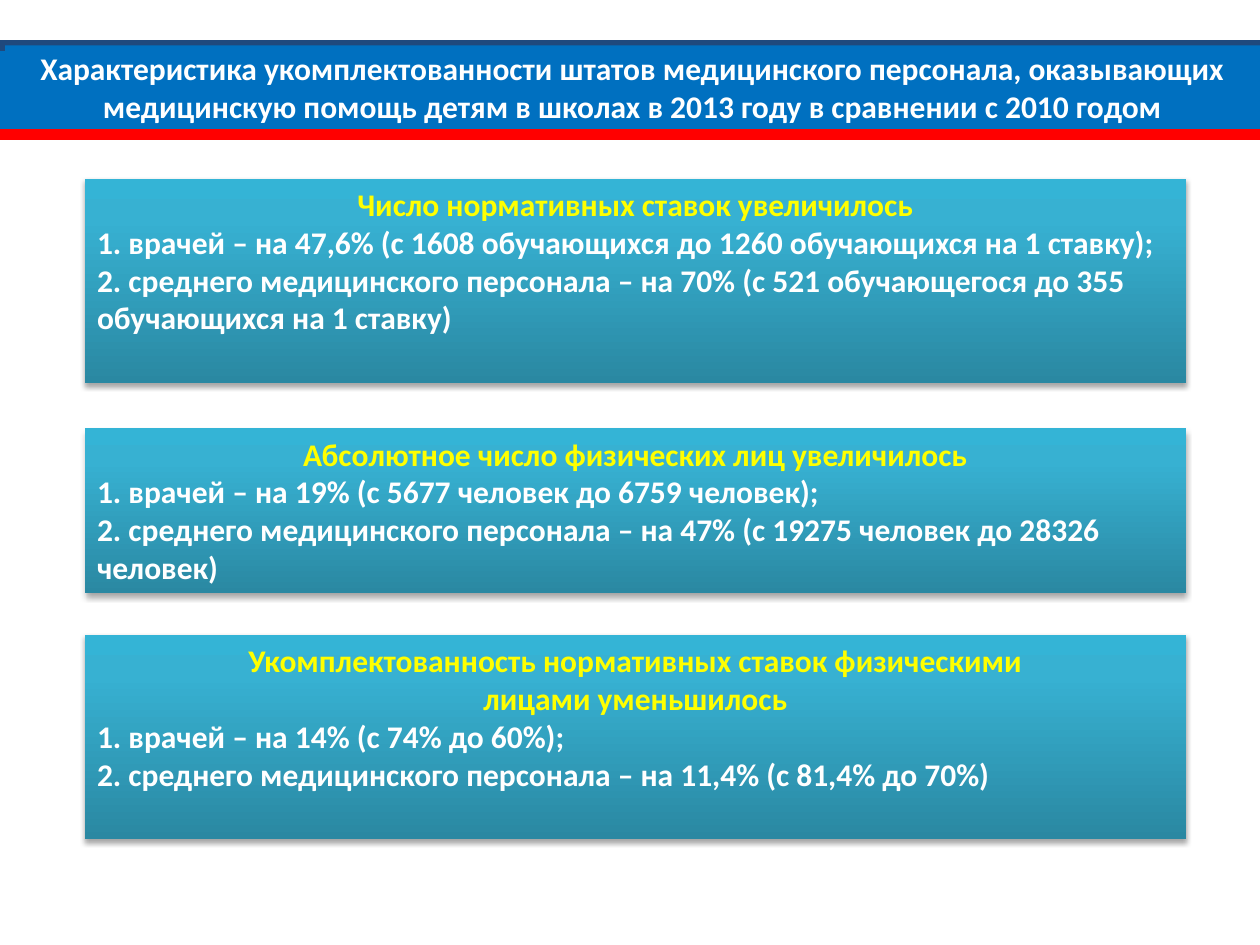
from dataclasses import dataclass

from lxml.etree import SubElement
from pptx import Presentation
from pptx.dml.color import RGBColor as Rgb
from pptx.enum.shapes import MSO_CONNECTOR as Connector, MSO_SHAPE as Shape
from pptx.enum.text import MSO_ANCHOR as Anchor, PP_ALIGN as Align
from pptx.oxml.ns import qn
from pptx.util import Pt

COLORS = {
    "banner": "0070C0", "navy": "1F497D", "red": "FF0000",
    "white": "FFFFFF", "yellow": "FFFF00", "shadow": "000000",
    "panel_bottom": "2A88A2", "panel_middle": "37B1D2", "panel_top": "34B4D6",
}
PANEL_STOPS = ((0, "panel_bottom"), (80, "panel_middle"), (100, "panel_top"))
PAGE_WIDTH, PAGE_HEIGHT = 720, 540
PANEL_LEFT, PANEL_WIDTH = 48.4, 629.4
BANNER_TOP, BANNER_HEIGHT = 26, 51
TITLE = ("Характеристика укомплектованности штатов медицинского персонала, "
         "оказывающих медицинскую помощь детям в школах в 2013 году "
         "в сравнении с 2010 годом")


@dataclass
class Panel:
    top: float
    height: float
    heading: list[str]
    items: list[str]


PANELS = [
    Panel(102.2, 116.6, ["Число нормативных ставок увеличилось"], [
        "1. врачей – на 47,6% (с 1608 обучающихся до 1260 обучающихся на 1 ставку);",
        "2. среднего медицинского персонала – на 70% (с 521 обучающегося "
        "до 355 обучающихся на 1 ставку)"]),
    Panel(244.8, 94.4, ["Абсолютное число физических лиц увеличилось"], [
        "1. врачей – на 19% (с 5677 человек до 6759 человек);",
        "2. среднего медицинского персонала – на 47% (с 19275 человек "
        "до 28326 человек)"]),
    Panel(362.9, 116.6,
          ["Укомплектованность нормативных ставок физическими", "лицами уменьшилось"], [
              "1. врачей – на 14% (с 74% до 60%);",
              "2. среднего медицинского персонала – на 11,4% (с 81,4% до 70%)"]),
]


def add_box(page, left: float, top: float, width: float, height: float):
    """Add a plain banner-coloured rectangle without outline."""
    box = page.shapes.add_shape(Shape.RECTANGLE, Pt(left), Pt(top), Pt(width), Pt(height))
    box.shadow.inherit = False
    box.fill.solid()
    box.fill.fore_color.rgb = Rgb.from_string(COLORS["banner"])
    box.line.fill.background()
    box.text_frame.word_wrap = True
    return box


def add_rule(page, top: float, color: str) -> None:
    """Add a thick line across the whole page."""
    rule = page.shapes.add_connector(Connector.STRAIGHT, Pt(0), Pt(top), Pt(PAGE_WIDTH), Pt(top))
    rule.line.color.rgb = Rgb.from_string(COLORS[color])
    rule.line.width = Pt(6)
    SubElement(rule.element.spPr, qn("a:effectLst"))


def write_lines(box, lines: list[tuple[str, str, Align]]) -> None:
    """Write one bold paragraph per (text, colour, alignment)."""
    frame = box.text_frame
    for index, (text, color, align) in enumerate(lines):
        para = frame.add_paragraph() if index else frame.paragraphs[0]
        para.alignment = align
        span = para.add_run()
        span.text = text
        span.font.name = "Calibri"
        span.font.size = Pt(18)
        span.font.bold = True
        span.font.color.rgb = Rgb.from_string(COLORS[color])


def style_panel(box) -> None:
    """Give a panel its three-stop gradient and soft lower shadow."""
    box.fill.gradient()
    box.fill.gradient_angle = 90
    stops = box.element.spPr.find(qn("a:gradFill")).find(qn("a:gsLst"))
    for stop in list(stops):
        stops.remove(stop)
    for percent, color in PANEL_STOPS:
        stop = SubElement(stops, qn("a:gs"), pos=str(percent * 1000))
        SubElement(stop, qn("a:srgbClr"), val=COLORS[color])

    effects = box.element.spPr.find(qn("a:effectLst"))
    shadow = SubElement(effects, qn("a:outerShdw"), blurRad=str(Pt(3.1)), dist=str(Pt(1.8)),
                        dir="5400000", rotWithShape="0")
    shade = SubElement(shadow, qn("a:srgbClr"), val=COLORS["shadow"])
    SubElement(shade, qn("a:alpha"), val="35000")


def add_panel(page, panel: Panel) -> None:
    box = add_box(page, PANEL_LEFT, panel.top, PANEL_WIDTH, panel.height)
    style_panel(box)
    box.text_frame.vertical_anchor = Anchor.TOP
    write_lines(box, [(text, "yellow", Align.CENTER) for text in panel.heading]
                + [(text, "white", Align.LEFT) for text in panel.items])


def main() -> None:
    deck = Presentation()
    deck.slide_width, deck.slide_height = Pt(PAGE_WIDTH), Pt(PAGE_HEIGHT)
    page = deck.slides.add_slide(deck.slide_layouts[6])

    # Banner with its rules
    add_box(page, 0, BANNER_TOP, PAGE_WIDTH, BANNER_HEIGHT)
    add_rule(page, BANNER_TOP, "navy")
    add_rule(page, BANNER_TOP + BANNER_HEIGHT, "red")

    # Title
    title = add_box(page, 3, BANNER_TOP, PAGE_WIDTH - 3, 44.6)
    title.text_frame.vertical_anchor = Anchor.MIDDLE
    title.text_frame.margin_top, title.text_frame.margin_bottom = Pt(3), Pt(0)
    write_lines(title, [(TITLE, "white", Align.CENTER)])

    # Panels
    for panel in PANELS:
        add_panel(page, panel)

    deck.save("out.pptx")


if __name__ == "__main__":
    main()
